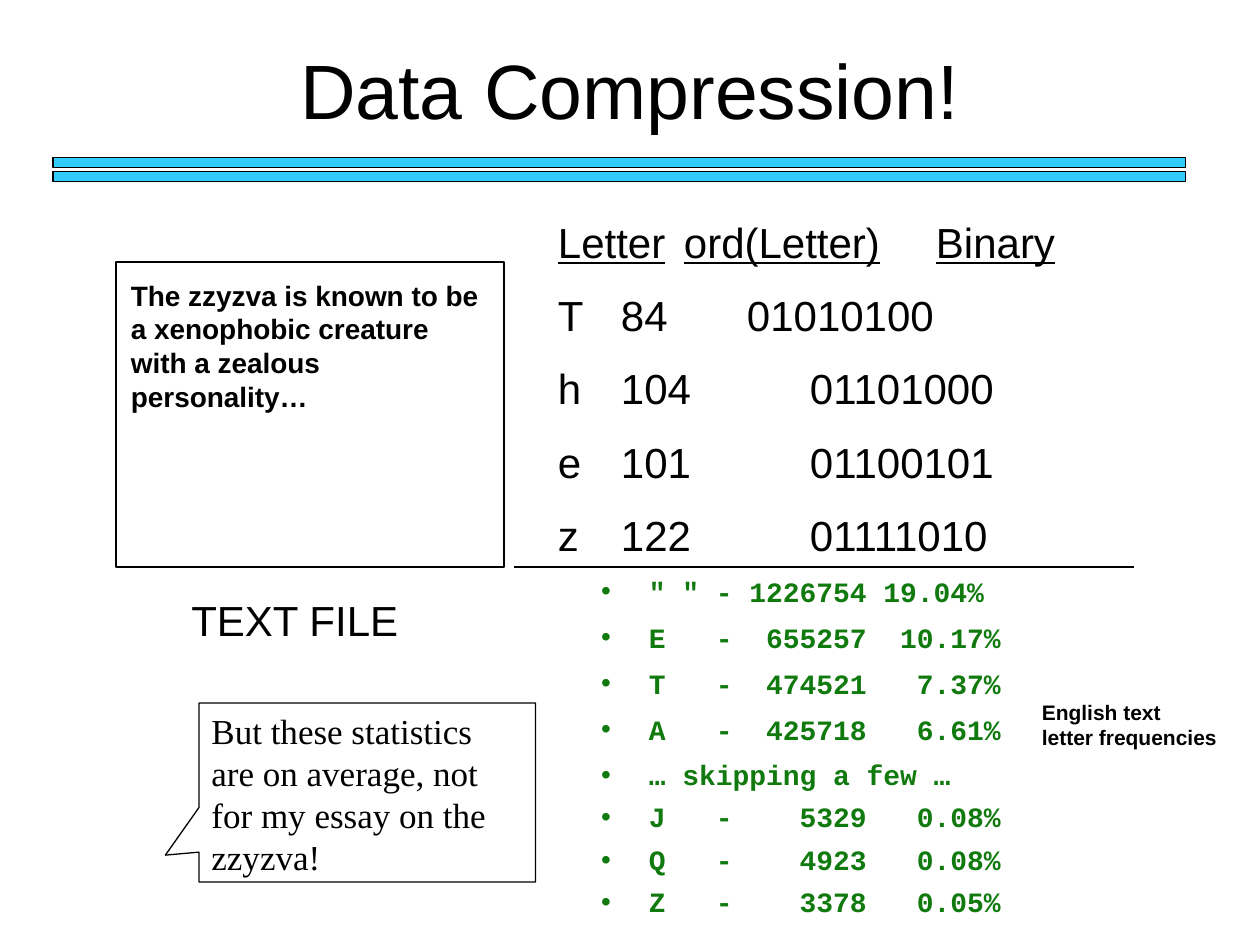
from lxml import etree
from pptx import Presentation
from pptx.dml.color import RGBColor
from pptx.enum import shapes, text
from pptx.oxml import ns
from pptx.util import Inches, Pt

COLORS = {"ink": "000000", "bar": "33CCFF", "paper": "FFFFFF", "stats": "117A0E"}
LETTERS = [("T", "84", "01010100"), ("h", "104", "01101000"),
           ("e", "101", "01100101"), ("z", "122", "01111010")]
FREQUENCIES = ['" " - 1226754 19.04%', "E   -  655257  10.17%",
               "T   -  474521   7.37%", "A   -  425718   6.61%",
               "… skipping a few …", "J   -    5329   0.08%",
               "Q   -    4923   0.08%", "Z   -    3378   0.05%"]


def rgb(name):
    return RGBColor.from_string(COLORS[name])


def add_run(p, content, size, font="Arial", color="ink", bold=False, underline=False):
    r = p.add_run()
    r.text = content
    r.font.size, r.font.name, r.font.bold = Pt(size), font, bold
    r.font.underline = underline
    r.font.color.rgb = rgb(color)


def add_box(slide, box, wrap=True):
    tf = slide.shapes.add_textbox(*map(Inches, box)).text_frame
    tf.word_wrap = wrap
    return tf


def next_paragraph(tf):
    """Return the first paragraph while it is empty, then new ones."""
    p = tf.paragraphs[0]
    return tf.add_paragraph() if p.runs else p


def add_outlined(slide, kind, box, fill=None):
    sp = slide.shapes.add_shape(kind, *map(Inches, box))
    sp.shadow.inherit = False
    if fill:
        sp.fill.solid()
        sp.fill.fore_color.rgb = rgb(fill)
    else:
        sp.fill.background()
    sp.line.color.rgb = rgb("ink")
    sp.line.width = Pt(0.75)
    return sp


def set_insets(tf):
    tf.margin_left = tf.margin_top = tf.margin_bottom = Inches(0.06)
    tf.margin_right = Inches(0.1)


def add_bullet(p):
    pPr = p._p.get_or_add_pPr()
    pPr.set("marL", str(Inches(0.42)))
    pPr.set("indent", str(Inches(-0.38)))
    etree.SubElement(pPr, ns.qn("a:buFont")).set("typeface", "Arial")
    etree.SubElement(pPr, ns.qn("a:buChar")).set("char", "•")


def title(slide, box):
    tf = add_box(slide, box)
    set_insets(tf)
    tf.vertical_anchor = text.MSO_ANCHOR.MIDDLE
    p = tf.paragraphs[0]
    p.alignment = text.PP_ALIGN.CENTER
    p._p.get_or_add_pPr().set("marL", str(Inches(0.04)))
    add_run(p, "Data Compression!", 44)


def double_bar(slide, box):
    left, top, width, height = box
    bar = 0.08
    for y in (top, top + height - bar):
        add_outlined(slide, shapes.MSO_SHAPE.RECTANGLE, (left, y, width, bar), "bar")


def text_file(slide, box):
    left, top, width, height = box
    tf = add_box(slide, (left + 0.02, top + 0.08, width - 0.1, 1.17))
    add_run(tf.paragraphs[0], "The zzyzva is known to be a xenophobic creature "
            "with a zealous personality…", 16, bold=True)
    add_outlined(slide, shapes.MSO_SHAPE.RECTANGLE, box)
    # Caption below the frame
    tf = add_box(slide, (left + 0.5, top + height + 0.17, 1.85, 0.5), wrap=False)
    add_run(tf.paragraphs[0], "TEXT FILE", 24)


def letter_codes(slide, box):
    tf = add_box(slide, box)
    p = next_paragraph(tf)
    for i, heading in enumerate(("Letter", "ord(Letter)", "Binary")):
        if i:
            add_run(p, "\t", 24)
        add_run(p, heading, 24, underline=True)
    for letter, code, binary in LETTERS:
        p = next_paragraph(tf)
        p.space_before = Pt(13)
        add_run(p, f"{letter}\t{code}\t\t{binary}", 24)


def frequencies(slide, box):
    tf = add_box(slide, box)
    set_insets(tf)
    for i, entry in enumerate(FREQUENCIES):
        p = next_paragraph(tf)
        p.space_before = Pt(7 if i else 0)
        if i > 4:
            p.line_spacing = 0.9
        add_bullet(p)
        add_run(p, entry, 16, "Courier New", "stats", bold=True)


def divider(slide, left, right, y):
    line = slide.shapes.add_connector(shapes.MSO_CONNECTOR.STRAIGHT, Inches(left),
                                      Inches(y), Inches(right), Inches(y))
    line.line.color.rgb = rgb("ink")
    line.line.width = Pt(0.75)
    etree.SubElement(line._element.spPr, ns.qn("a:effectLst"))


def callout(slide, box):
    sp = add_outlined(slide, shapes.MSO_SHAPE.RECTANGULAR_CALLOUT, box, "paper")
    sp.adjustments[0], sp.adjustments[1] = -0.6, 0.35
    tf = sp.text_frame
    tf.word_wrap = True
    tf.vertical_anchor = text.MSO_ANCHOR.TOP
    p = tf.paragraphs[0]
    p.alignment = text.PP_ALIGN.LEFT
    add_run(p, "But these statistics are on average, not for my essay on the zzyzva!",
            20, "Times New Roman")


def frequency_label(slide, box):
    tf = add_box(slide, box, wrap=False)
    for line in ("English text", "letter frequencies"):
        add_run(next_paragraph(tf), line, 12, bold=True)


def main():
    prs = Presentation()
    prs.slide_width, prs.slide_height = Inches(10), Inches(7.5)
    slide = prs.slides.add_slide(prs.slide_layouts[6])
    title(slide, (0.75, 0.08, 8.5, 1.25))
    double_bar(slide, (0.42, 1.25, 8.99, 0.19))
    text_file(slide, (0.92, 2.08, 3.08, 2.42))
    letter_codes(slide, (4.33, 1.67, 4.92, 2.9))
    frequencies(slide, (4.67, 4.5, 3.75, 2.92))
    divider(slide, 4.08, 9, 4.5)
    callout(slide, (1.58, 5.58, 2.67, 1.42))
    frequency_label(slide, (8.17, 5.5, 1.59, 0.5))
    prs.save("out.pptx")


if __name__ == "__main__":
    main()
